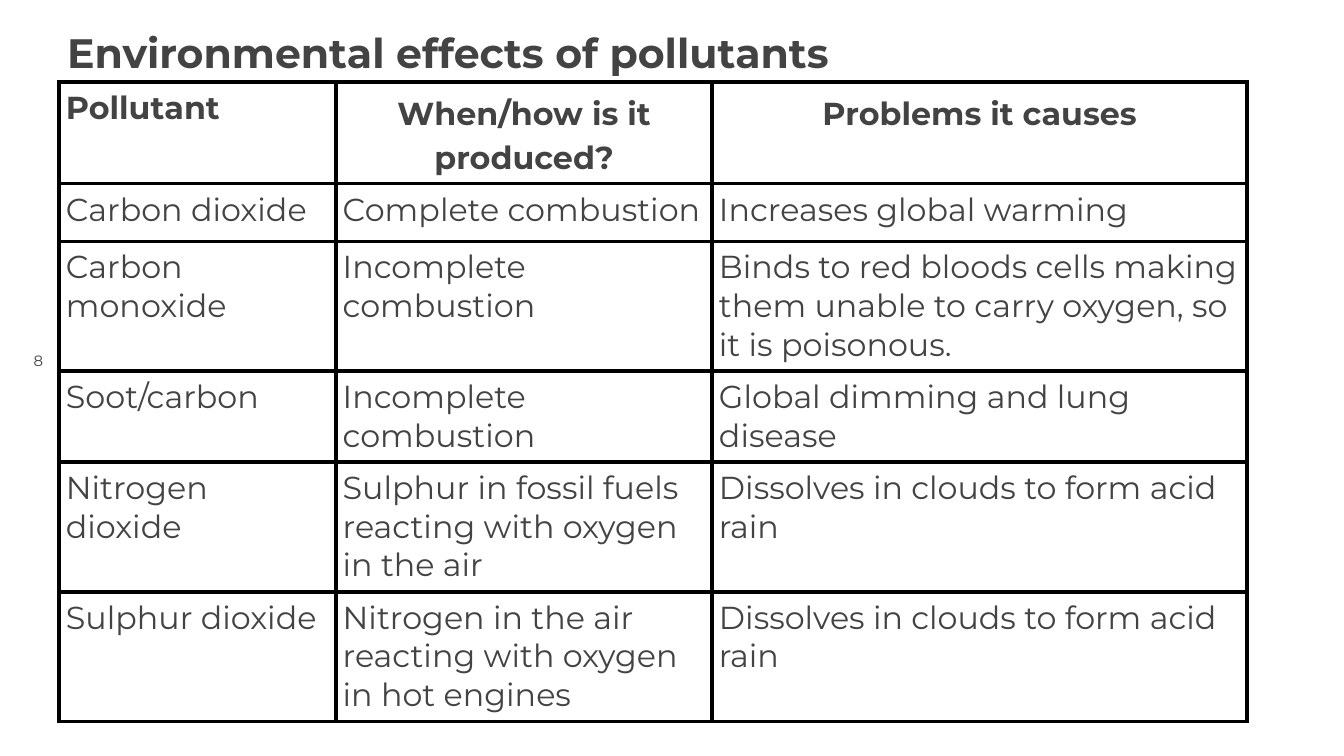
"""Build a slide with a table of pollutants, their sources and their effects."""
from lxml import etree
from pptx import Presentation
from pptx.dml.color import RGBColor
from pptx.enum.text import MSO_ANCHOR, PP_ALIGN
from pptx.oxml.ns import qn
from pptx.util import Pt

TOP = MSO_ANCHOR.TOP
LEFT, CENTER = PP_ALIGN.LEFT, PP_ALIGN.CENTER
FONT, TEXT_COLOR, BORDER_COLOR = "Montserrat", "434343", "000000"
BORDER_WIDTH = Pt(2.25)
CELL_MARGIN = Pt(3.6)
COLUMN_WIDTHS = [148.3, 201.6, 286.6]
ROW_HEIGHTS = [54.5, 31, 69.5, 48.7, 69.5, 69.5]
ROWS = [
    ["Pollutant", "When/how is it produced?", "Problems it causes"],
    ["Carbon dioxide", "Complete combustion", "Increases global warming"],
    ["Carbon monoxide", "Incomplete combustion",
     "Binds to red bloods cells making them unable to carry oxygen, so it is poisonous."],
    ["Soot/carbon", "Incomplete combustion", "Global dimming and lung disease"],
    ["Nitrogen dioxide", "Sulphur in fossil fuels reacting with oxygen in the air",
     "Dissolves in clouds to form acid rain"],
    ["Sulphur dioxide", "Nitrogen in the air reacting with oxygen in hot engines",
     "Dissolves in clouds to form acid rain"],
]


def color(value):
    """Return the colour for a hex string."""
    return RGBColor.from_string(value)


def write(text_frame, text, size, bold=False, align=LEFT, spacing=1.0):
    """Write one formatted run in the first paragraph of a text frame."""
    text_frame.word_wrap = True
    paragraph = text_frame.paragraphs[0]
    paragraph.alignment = align
    paragraph.line_spacing = spacing
    run = paragraph.add_run()
    run.text = text
    run.font.name = FONT
    run.font.size = Pt(size)
    run.font.bold = bold
    run.font.color.rgb = color(TEXT_COLOR)


presentation = Presentation()
presentation.slide_width, presentation.slide_height = Pt(720), Pt(405)
slide = presentation.slides.add_slide(presentation.slide_layouts[5])
slide.background.fill.solid()
slide.background.fill.fore_color.rgb = color("FFFFFF")

title = slide.shapes.title
title.left, title.top, title.width, title.height = Pt(36), Pt(10.8), Pt(648), Pt(64)
number_box = slide.shapes.add_textbox(Pt(18), Pt(188.6), Pt(28), Pt(7.2))
for shape in (title, number_box):
    frame = shape.text_frame
    frame.margin_left = frame.margin_right = frame.margin_top = frame.margin_bottom = 0
    frame.vertical_anchor = TOP
write(title.text_frame, "Environmental effects of pollutants", 22, bold=True, spacing=1.15)
write(number_box.text_frame, "8", 8)

table = slide.shapes.add_table(
    len(ROWS), len(COLUMN_WIDTHS), Pt(31.7), Pt(43.9),
    Pt(sum(COLUMN_WIDTHS)), Pt(sum(ROW_HEIGHTS))).table
table.first_row = table.horz_banding = False
for column, width in zip(table.columns, COLUMN_WIDTHS):
    column.width = Pt(width)
for row, height in zip(table.rows, ROW_HEIGHTS):
    row.height = Pt(height)

for row_index, texts in enumerate(ROWS):
    for column_index, text in enumerate(texts):
        cell = table.cell(row_index, column_index)
        cell.margin_left = cell.margin_right = CELL_MARGIN
        cell.margin_top = cell.margin_bottom = CELL_MARGIN
        cell.vertical_anchor = TOP
        header = row_index == 0
        centered = header and column_index > 0
        write(cell.text_frame, text, 17, header,
              CENTER if centered else LEFT, 1.15 if centered else 1.0)
        properties = cell._tc.get_or_add_tcPr()
        for side in ("a:lnL", "a:lnR", "a:lnT", "a:lnB"):
            line = etree.SubElement(properties, qn(side), w=str(BORDER_WIDTH))
            fill = etree.SubElement(line, qn("a:solidFill"))
            etree.SubElement(fill, qn("a:srgbClr"), val=BORDER_COLOR)
        cell.fill.background()

presentation.save("out.pptx")
